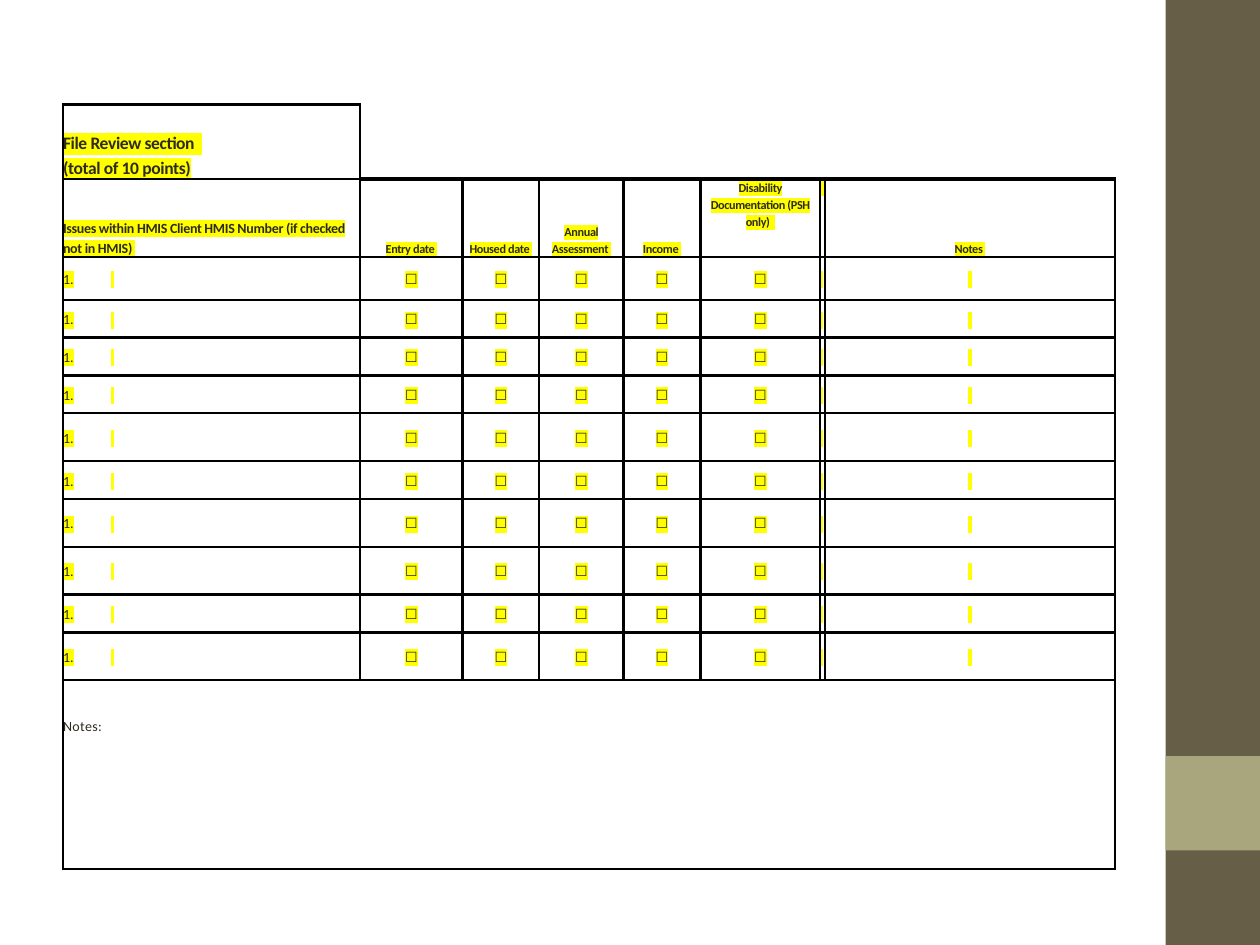
from lxml import etree
from pptx import Presentation
from pptx.dml.color import RGBColor
from pptx.enum.shapes import MSO_SHAPE
from pptx.enum.text import MSO_ANCHOR, PP_ALIGN
from pptx.oxml.ns import qn
from pptx.util import Inches, Pt

RECTANGLE = MSO_SHAPE.RECTANGLE
TOP, MIDDLE, BOTTOM = MSO_ANCHOR.TOP, MSO_ANCHOR.MIDDLE, MSO_ANCHOR.BOTTOM
LEFT, CENTER = PP_ALIGN.LEFT, PP_ALIGN.CENTER
color = RGBColor.from_string


def set_borders(cell, **widths):
    properties = cell._tc.get_or_add_tcPr()
    for side in "LRTB":
        width = widths.get(side, 0)
        line = etree.SubElement(properties, qn(f"a:ln{side}"), w=str(Pt(width)))
        if width:
            fill = etree.SubElement(line, qn("a:solidFill"))
            etree.SubElement(fill, qn("a:srgbClr"), val="000000")
        else:
            etree.SubElement(line, qn("a:noFill"))
    cell.fill.background()


def write(cell, lines, size, bold=False, align=LEFT, anchor=MIDDLE, highlight=True):
    cell.vertical_anchor = anchor
    cell.text = "\n".join(lines)
    for paragraph in cell.text_frame.paragraphs:
        paragraph.alignment = align
        paragraph.line_spacing = 1.15
        run = paragraph.runs[0]
        run.font.size = Pt(size)
        run.font.bold = bold
        run.font.color.rgb = color("2F2B20")
        run.font.name = "Calibri"
        properties = run.font._element
        properties.set("spc", "-20" if bold else "20")
        if highlight:
            marker = etree.Element(qn("a:highlight"))
            etree.SubElement(marker, qn("a:srgbClr"), val="FFFF00")
            properties.find(qn("a:latin")).addprevious(marker)


presentation = Presentation()
presentation.slide_width, presentation.slide_height = Inches(10), Inches(7.5)
slide = presentation.slides.add_slide(presentation.slide_layouts[6])

for top, height, fill in [(0, 7.5, "675E47"), (6, 0.75, "A9A57C")]:
    band = slide.shapes.add_shape(
        RECTANGLE, Inches(9.25), Inches(top), Inches(0.75), Inches(height))
    band.shadow.inherit = False
    band.fill.solid()
    band.fill.fore_color.rgb = color(fill)
    band.line.fill.background()

column_widths = [2.36, 0.81, 0.61, 0.67, 0.61, 0.95, 0.03, 2.3]
client_heights = [0.34, 0.3, 0.3, 0.3, 0.38, 0.3, 0.38, 0.38, 0.3, 0.38]
row_heights = [0.59, 0.62, *client_heights, 1.5]
last_row, last_column = len(row_heights) - 1, len(column_widths) - 1

table = slide.shapes.add_table(
    len(row_heights), len(column_widths), Inches(0.5), Inches(0.83),
    Inches(sum(column_widths)), Inches(sum(row_heights))).table
table.first_row = table.horz_banding = False
for column, width in zip(table.columns, column_widths):
    column.width = Inches(width)
for row, height in zip(table.rows, row_heights):
    row.height = Inches(height)

for row_index, row in enumerate(table.rows):
    for column_index, cell in enumerate(row.cells):
        cell.margin_left = cell.margin_right = cell.margin_top = cell.margin_bottom = 0
        if row_index == 0 and column_index > 0:
            set_borders(cell, L=1.5 if column_index == 1 else 0, B=2.25)
        else:
            heavy_top = row_index == 1 and column_index > 0
            set_borders(cell, L=1.5, R=1.5, T=2.25 if heavy_top else 1.5, B=1.5)

table.cell(0, 1).merge(table.cell(0, last_column))
table.cell(last_row, 0).merge(table.cell(last_row, last_column))

write(table.cell(0, 0), ["File Review section  ", "(total of 10 points)"], 10, True, anchor=BOTTOM)
write(table.cell(1, 0), ["Issues within HMIS Client HMIS Number (if checked not in HMIS) "],
      8, True, anchor=BOTTOM)
headings = ["Entry date ", "Housed date ", "Annual Assessment ", "Income ",
            "Disability Documentation (PSH only)  ", " ", "Notes "]
for column_index, heading in enumerate(headings, 1):
    anchor = TOP if column_index in (5, 6) else BOTTOM
    write(table.cell(1, column_index), [heading], 7, True, CENTER, anchor)

for row_index in range(2, last_row):
    number_cell = table.cell(row_index, 0)
    write(number_cell, [" "], 8)
    numbering = number_cell.text_frame.paragraphs[0]._p.get_or_add_pPr()
    numbering.set("marL", str(Inches(0.38)))
    numbering.set("indent", str(-Inches(0.38)))
    etree.SubElement(numbering, qn("a:buFont"), typeface="+mj-lt")
    etree.SubElement(numbering, qn("a:buAutoNum"), type="arabicPeriod")
    for column_index in range(1, 6):
        write(table.cell(row_index, column_index), ["☐"], 8, align=CENTER)
    write(table.cell(row_index, 6), [" "], 8)
    write(table.cell(row_index, last_column), [" "], 8, align=CENTER)

notes = table.cell(last_row, 0)
notes.margin_top = Inches(0.28)
write(notes, ["Notes:"], 8, anchor=TOP, highlight=False)

presentation.save("out.pptx")
